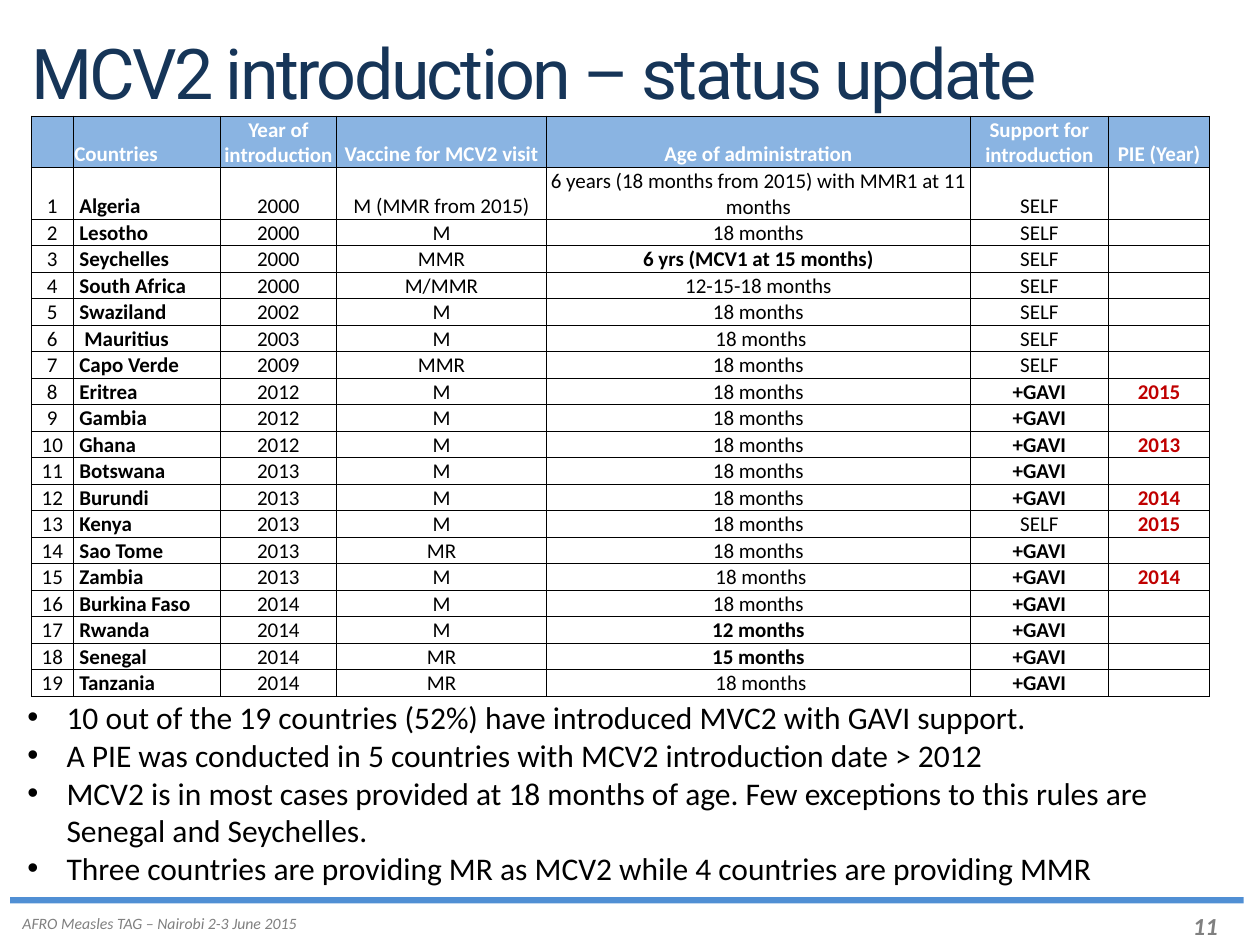
from lxml.etree import SubElement
from pptx import Presentation
from pptx.dml.color import RGBColor
from pptx.enum.shapes import MSO_SHAPE as Shape
from pptx.enum.text import MSO_ANCHOR as Anchor, PP_ALIGN as Align
from pptx.oxml.ns import qn
from pptx.util import Inches, Pt

NAVY, BLUE, PALE_BLUE = "163558", "508FD4", "8AB4E2"
GREY, RED, BLACK, WHITE = "808080", "C00000", "000000", "FFFFFF"

COLUMNS = [0.33, 1.17, 0.92, 1.67, 3.36, 1.1, 0.8]
HEADERS = ["", "Countries", "Year of introduction", "Vaccine for MCV2 visit",
           "Age of administration", "Support for introduction", "PIE (Year)"]
USUAL_AGE = "18 months"
COUNTRIES = [
    ("Algeria", "2000", "M (MMR from 2015)",
     "6 years (18 months from 2015) with MMR1 at 11 months", "SELF", ""),
    ("Lesotho", "2000", "M", USUAL_AGE, "SELF", ""),
    ("Seychelles", "2000", "MMR", "6 yrs (MCV1 at 15 months)", "SELF", ""),
    ("South Africa", "2000", "M/MMR", "12-15-18 months", "SELF", ""),
    ("Swaziland", "2002", "M", USUAL_AGE, "SELF", ""),
    ("Mauritius", "2003", "M", USUAL_AGE, "SELF", ""),
    ("Capo Verde", "2009", "MMR", USUAL_AGE, "SELF", ""),
    ("Eritrea", "2012", "M", USUAL_AGE, "+GAVI", "2015"),
    ("Gambia", "2012", "M", USUAL_AGE, "+GAVI", ""),
    ("Ghana", "2012", "M", USUAL_AGE, "+GAVI", "2013"),
    ("Botswana", "2013", "M", USUAL_AGE, "+GAVI", ""),
    ("Burundi", "2013", "M", USUAL_AGE, "+GAVI", "2014"),
    ("Kenya", "2013", "M", USUAL_AGE, "SELF", "2015"),
    ("Sao Tome", "2013", "MR", USUAL_AGE, "+GAVI", ""),
    ("Zambia", "2013", "M", USUAL_AGE, "+GAVI", "2014"),
    ("Burkina Faso", "2014", "M", USUAL_AGE, "+GAVI", ""),
    ("Rwanda", "2014", "M", "12 months", "+GAVI", ""),
    ("Senegal", "2014", "MR", "15 months", "+GAVI", ""),
    ("Tanzania", "2014", "MR", USUAL_AGE, "+GAVI", ""),
]
BOLD_TEXTS = {"6 yrs (MCV1 at 15 months)", "12 months", "15 months", "+GAVI"}
COUNTRY_COLUMN, AGE_COLUMN, PIE_COLUMN = 1, 4, 6
SHIFTED_CELLS = {(6, COUNTRY_COLUMN), (6, AGE_COLUMN), (15, AGE_COLUMN), (19, AGE_COLUMN)}
FINDINGS = [
    "10 out of the 19 countries (52%) have introduced MVC2 with GAVI support.",
    "A PIE was conducted in 5 countries with MCV2 introduction date > 2012",
    "MCV2 is in most cases provided at 18 months of age. Few exceptions to this rules are "
    "Senegal and Seychelles.",
    "Three countries are providing MR as MCV2 while 4 countries are providing MMR",
]


def color(value):
    return RGBColor.from_string(value)


def set_all(target, values):
    for name, value in values.items():
        setattr(target, name, value)


class SlideBuilder:
    """Holds the text style and the current slide, and adds elements to it."""

    def __init__(self, slide, font_name="Calibri"):
        self.slide = slide
        self.font_name = font_name

    def add_text_run(self, paragraph, text, size, text_color=BLACK, spacing=None, **style):
        run = paragraph.add_run()
        run.text = text
        set_all(run.font, {"name": self.font_name, "size": Pt(size), **style})
        run.font.color.rgb = color(text_color)
        if spacing is not None:
            run._r.get_or_add_rPr().set("spc", str(spacing))

    def bar(self, box, fill):
        shape = self.slide.shapes.add_shape(Shape.RECTANGLE, *map(Inches, box))
        shape.shadow.inherit = False
        shape.fill.solid()
        shape.fill.fore_color.rgb = color(fill)
        shape.line.fill.background()

    def text(self, box, lines, size, bullet=None, frame=None, line_spacing=None, **style):
        text_frame = self.slide.shapes.add_textbox(*map(Inches, box)).text_frame
        set_all(text_frame, {"word_wrap": True, **(frame or {})})
        for index, line in enumerate(lines):
            paragraph = text_frame.add_paragraph() if index else text_frame.paragraphs[0]
            if line_spacing:
                paragraph.line_spacing = line_spacing
            if bullet:
                properties = paragraph._p.get_or_add_pPr()
                properties.set("marL", str(Inches(0.31)))
                properties.set("indent", str(Inches(-0.31)))
                SubElement(properties, qn("a:buFont"), typeface="Arial")
                SubElement(properties, qn("a:buChar"), char=bullet)
            self.add_text_run(paragraph, line, size, **style)

    def border(self, cell):
        properties = cell._tc.get_or_add_tcPr()
        for index, side in enumerate(("lnL", "lnR", "lnT", "lnB")):
            line = properties.makeelement(qn(f"a:{side}"), {"w": str(Pt(0.5))})
            fill = SubElement(line, qn("a:solidFill"))
            SubElement(fill, qn("a:srgbClr"), val=BLACK)
            properties.insert(index, line)

    def cell(self, cell, text, align, indent=0, fill=None, **style):
        set_all(cell, {"vertical_anchor": Anchor.BOTTOM, "margin_left": Inches(0.01 + indent),
                       "margin_right": Inches(0.01), "margin_top": Inches(0.01),
                       "margin_bottom": 0})
        if fill:
            cell.fill.solid()
            cell.fill.fore_color.rgb = color(fill)
        else:
            cell.fill.background()
        self.border(cell)
        paragraph = cell.text_frame.paragraphs[0]
        paragraph.alignment = align
        if text:
            self.add_text_run(paragraph, text, 12, **style)
        else:
            SubElement(paragraph._p, qn("a:endParaRPr"), sz="1200")

    def table(self, box, rows):
        frame = self.slide.shapes.add_table(len(rows), len(COLUMNS), *map(Inches, box))
        table = frame.table
        table.horz_banding = False
        for column, width in zip(table.columns, COLUMNS):
            column.width = Inches(width)
        for row_index, values in enumerate(rows):
            table.rows[row_index].height = Inches(0.4 if row_index < 2 else 0.2)
            for column_index, text in enumerate(values):
                is_country = column_index == COUNTRY_COLUMN
                is_shifted = (row_index, column_index) in SHIFTED_CELLS
                style = {"bold": is_country or column_index == PIE_COLUMN or text in BOLD_TEXTS,
                         "text_color": RED if column_index == PIE_COLUMN else BLACK,
                         "indent": 0.04 * (is_country + is_shifted)}
                if row_index == 0:
                    style = {"bold": True, "text_color": WHITE, "fill": PALE_BLUE}
                align = Align.LEFT if is_country else Align.CENTER
                self.cell(table.cell(row_index, column_index), text, align, **style)


def main():
    presentation = Presentation()
    set_all(presentation, {"slide_width": Inches(10), "slide_height": Inches(7.5)})
    slide = presentation.slides.add_slide(presentation.slide_layouts[6])
    builder = SlideBuilder(slide)

    builder.bar((0.08, 7.12, 9.79, 0.05), BLUE)
    footer = {"frame": {"word_wrap": False}, "text_color": GREY, "italic": True}
    builder.text((9.37, 7.18, 0.44, 0.34), ["11"], 14, bold=True, **footer)
    builder.text((0.08, 7.2, 2.4, 0.25), ["AFRO Measles TAG – Nairobi 2-3 June 2015"], 9, **footer)

    title_frame = {"vertical_anchor": Anchor.BOTTOM, "margin_left": 0, "margin_right": 0,
                   "margin_top": 0, "margin_bottom": 0}
    builder.text((0.25, 0.29, 9.17, 0.62), ["MCV2 introduction – status update"], 40,
                 frame=title_frame, line_spacing=0.9, name="Roboto", text_color=NAVY, spacing=-150)
    builder.text((0.12, 5.49, 9.5, 1.62), FINDINGS, 18, bullet="•")

    numbered = [(str(number), *country) for number, country in enumerate(COUNTRIES, 1)]
    builder.table((0.25, 0.92, 9.33, 4.51), [HEADERS, *numbered])
    presentation.save("out.pptx")


if __name__ == "__main__":
    main()
